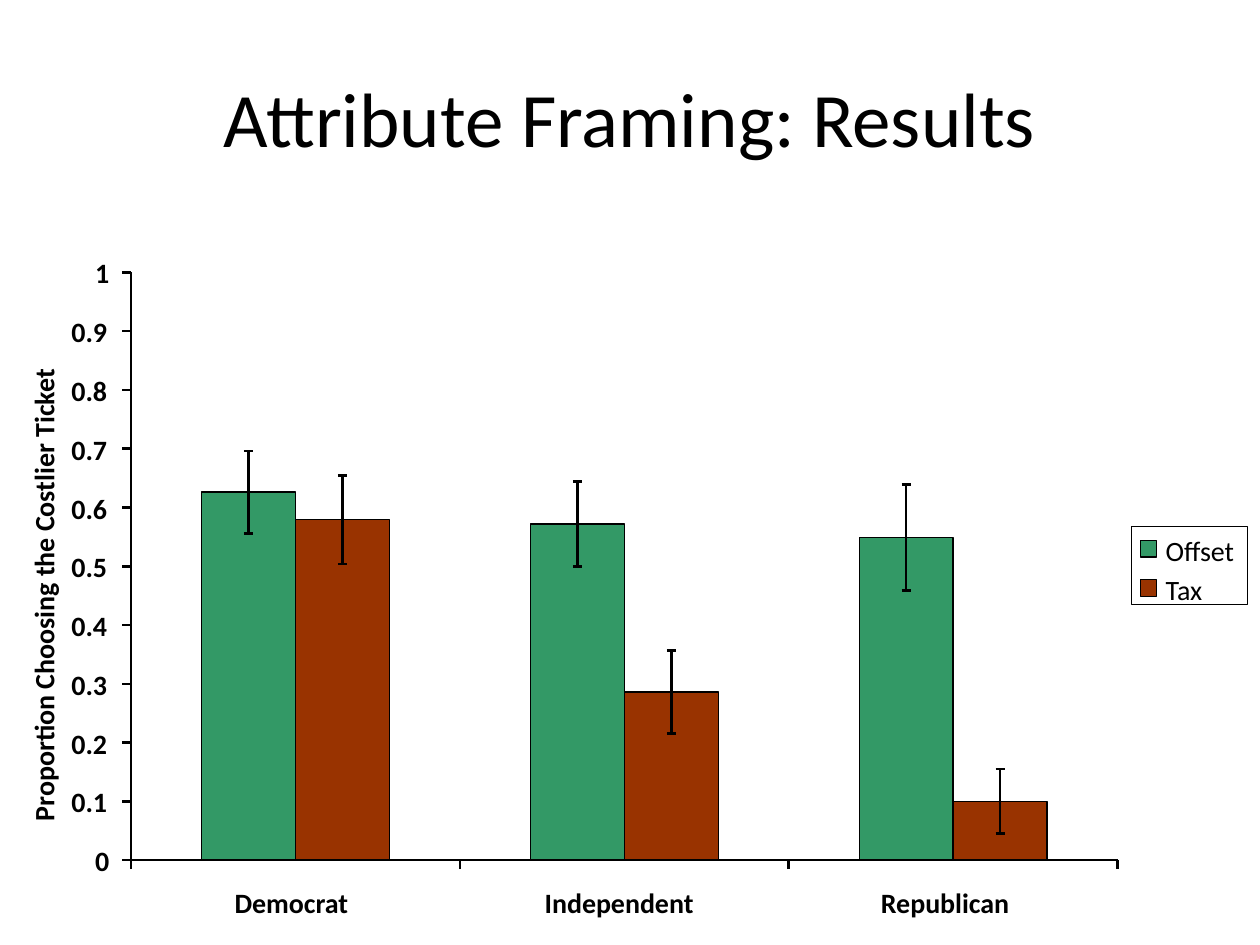
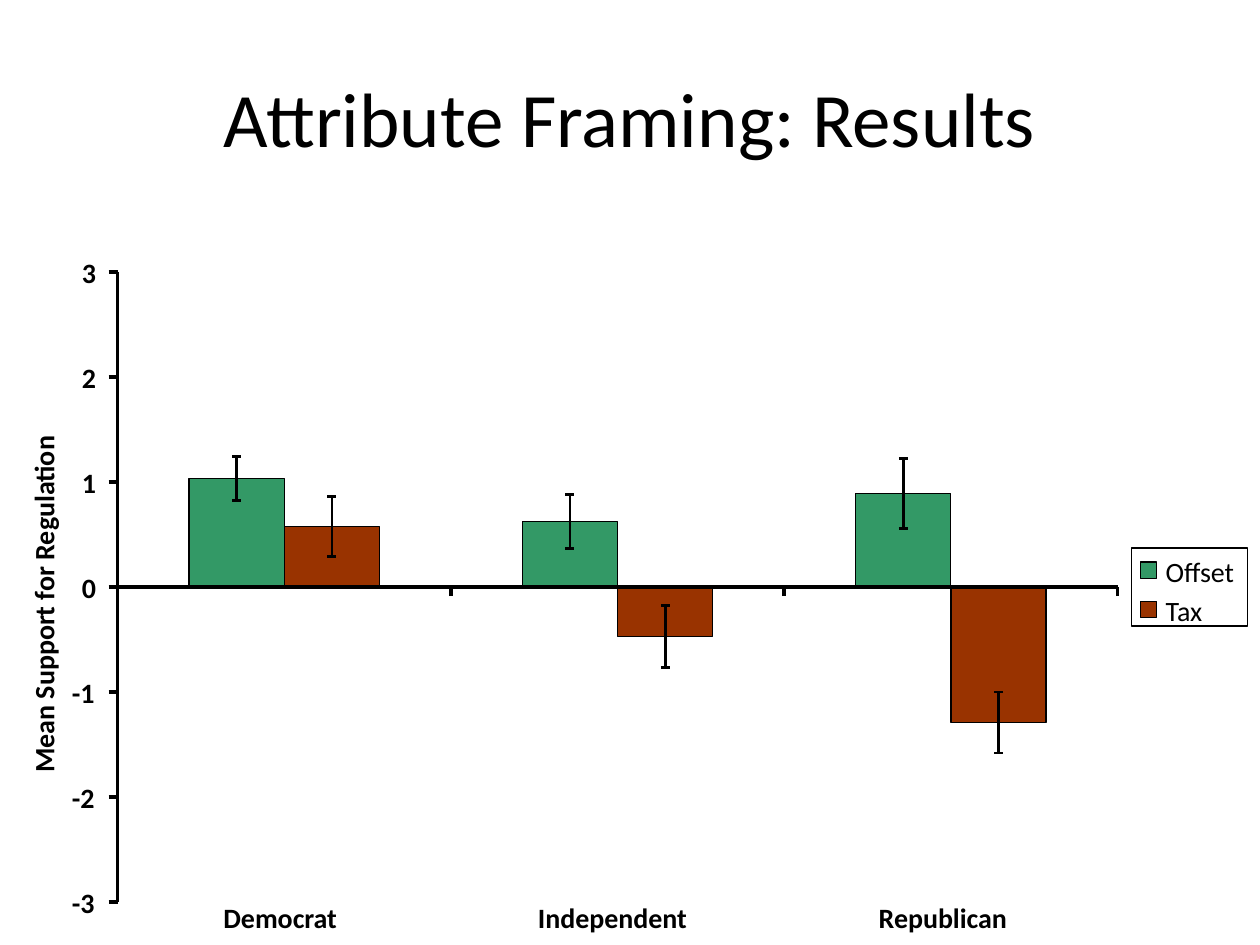
from pptx import Presentation
from pptx.dml.color import RGBColor
from pptx.enum.shapes import MSO_CONNECTOR, MSO_SHAPE
from pptx.enum.text import MSO_ANCHOR, MSO_AUTO_SIZE, PP_ALIGN
from pptx.oxml.ns import qn
from pptx.util import Cm, Pt
from lxml.etree import SubElement

COLOURS = {"ink": "000000", "paper": "FFFFFF", "Offset": "339966", "Tax": "993300"}
FONT = "Calibri"
TITLE = "Attribute Framing: Results"

# Parties and legend entries with their label widths (cm)
PARTIES = {"Democrat": 2.59, "Independent": 3.35, "Republican": 3.05}
CONDITIONS = {"Offset": 1.52, "Tax": 0.94}
TICK_WIDTHS = {1: 0.31, 2: 0.51, 3: 0.79}  # by number of characters

# Each bar is (value, error); lengths in cm, line weights in points
RESULTS = [
    {
        "measure": "Proportion Choosing the Costlier Ticket",
        "measure_width": 10.69, "measure_centre": 11.21,
        "ticks": [step / 10 for step in range(11)],
        "bars": {
            "Offset": [(0.626, 0.07), (0.572, 0.072), (0.549, 0.09)],
            "Tax": [(0.579, 0.075), (0.286, 0.071), (0.1, 0.055)],
        },
        "left": 2.64, "bottom": 17.34, "axis_weight": 1.5,
        "party_top": 17.86, "legend_top": 10.62,
    },
    {
        "measure": "Mean Support for Regulation",
        "measure_width": 7.75, "measure_centre": 11.7,
        "ticks": list(range(-3, 4)),
        "bars": {
            "Offset": [(1.035, 0.21), (0.625, 0.26), (0.892, 0.335)],
            "Tax": [(0.577, 0.285), (-0.472, 0.295), (-1.29, 0.29)],
        },
        "left": 2.37, "bottom": 18.18, "axis_weight": 2.13,
        "party_top": 18.16, "legend_top": 11.05,
    },
]

PLOT_TOP, PLOT_RIGHT = 5.49, 22.53
TICK, CAP = 0.18, 0.09
LABEL_HEIGHT = 0.69
MEASURE_X = 0.88
BARS_PER_PARTY = 3.5  # two bars plus a gap of one and a half


def colour(name):
    """Return a palette colour."""
    return RGBColor.from_string(COLOURS[name])


def add_box(slide, left, top, width, height, fill, weight=0.75):
    """Draw a filled rectangle with a black outline."""
    box = slide.shapes.add_shape(
        MSO_SHAPE.RECTANGLE, Cm(left), Cm(top), Cm(width), Cm(height))
    box.shadow.inherit = False
    box.fill.solid()
    box.fill.fore_color.rgb = colour(fill)
    box.line.color.rgb = colour("ink")
    box.line.width = Pt(weight)


def add_line(slide, x1, y1, x2, y2, weight=1.5):
    """Draw a straight black line."""
    line = slide.shapes.add_connector(
        MSO_CONNECTOR.STRAIGHT, Cm(x1), Cm(y1), Cm(x2), Cm(y2))
    line.line.color.rgb = colour("ink")
    line.line.width = Pt(weight)
    SubElement(line._element.spPr, qn("a:effectLst"))


def add_text(slide, text, left, top, width, height=LABEL_HEIGHT, size=16, bold=True):
    """Write one line in a text box without margins and return the box."""
    label = slide.shapes.add_textbox(Cm(left), Cm(top), Cm(width), Cm(height))
    frame = label.text_frame
    frame_format = {
        "margin_left": 0, "margin_right": 0, "margin_top": 0, "margin_bottom": 0,
        "word_wrap": False, "auto_size": MSO_AUTO_SIZE.SHAPE_TO_FIT_TEXT,
    }
    for attribute, value in frame_format.items():
        setattr(frame, attribute, value)
    run = frame.paragraphs[0].add_run()
    run.text = text
    for attribute, value in {"name": FONT, "size": Pt(size), "bold": bold}.items():
        setattr(run.font, attribute, value)
    run.font.color.rgb = colour("ink")
    return label


def add_title(slide):
    """Write the centred slide title."""
    frame = add_text(slide, TITLE, 1.27, 0.76, 22.86, 3.18, 44, False).text_frame
    frame.auto_size = MSO_AUTO_SIZE.NONE
    frame.word_wrap = True
    frame.vertical_anchor = MSO_ANCHOR.MIDDLE
    frame.paragraphs[0].alignment = PP_ALIGN.CENTER


def add_bars(slide, result, party_width, y_of):
    """Draw the bars of both conditions, then their error bars."""
    bar_width = party_width / BARS_PER_PARTY
    placed = []
    for position, (condition, bars) in enumerate(result["bars"].items()):
        for party, (value, error) in enumerate(bars):
            x = result["left"] + party * party_width + (0.75 + position) * bar_width
            top, base = y_of(max(value, 0)), y_of(min(value, 0))
            add_box(slide, x, top, bar_width, base - top, condition)
            placed.append((x + bar_width / 2, value, error))
    for middle, value, error in placed:
        for end in (y_of(value + error), y_of(value - error)):
            add_line(slide, middle, y_of(value), middle, end)
            add_line(slide, middle - CAP, end, middle + CAP, end)


def add_axes(slide, result, party_width, y_of):
    """Draw both axes with their tick marks and labels."""
    left, weight, zero = result["left"], result["axis_weight"], y_of(0)
    add_line(slide, left, PLOT_TOP, left, result["bottom"], weight)
    for tick in result["ticks"]:
        add_line(slide, left - TICK, y_of(tick), left, y_of(tick), weight)
    add_line(slide, left, zero, PLOT_RIGHT, zero, weight)
    for edge in range(len(PARTIES) + 1):
        x = left + edge * party_width
        add_line(slide, x, zero + TICK, x, zero, weight)

    for tick in result["ticks"]:
        number = f"{tick:g}"
        width = TICK_WIDTHS[len(number)]
        add_text(slide, number, left - 0.41 - width, y_of(tick) - 0.33, width)
    for index, (party, width) in enumerate(PARTIES.items()):
        middle = left + (index + 0.5) * party_width + 0.07
        add_text(slide, party, middle - width / 2, result["party_top"], width)
    width = result["measure_width"]
    measure = add_text(slide, result["measure"], MEASURE_X - width / 2,
                       result["measure_centre"] - LABEL_HEIGHT / 2, width)
    measure.rotation = 270


def add_legend(slide, top):
    """Draw the framed legend."""
    add_box(slide, 22.81, top, 2.34, 1.57, "paper", 0)
    for row, (condition, width) in enumerate(CONDITIONS.items()):
        row_top = top + row * 0.79
        add_box(slide, 22.99, row_top + 0.28, 0.33, 0.33, condition)
        add_text(slide, condition, 23.5, row_top + 0.13, width, bold=False)


def add_result_slide(deck, result):
    """Build one slide with its title, bar plot and legend."""
    slide = deck.slides.add_slide(deck.slide_layouts[6])
    low, high = result["ticks"][0], result["ticks"][-1]
    unit = (result["bottom"] - PLOT_TOP) / (high - low)
    party_width = (PLOT_RIGHT - result["left"]) / len(PARTIES)

    def y_of(value):
        """Return the height on the slide of a value."""
        return PLOT_TOP + (high - value) * unit

    add_title(slide)
    add_bars(slide, result, party_width, y_of)
    add_axes(slide, result, party_width, y_of)
    add_legend(slide, result["legend_top"])


deck = Presentation()
deck.slide_width, deck.slide_height = Cm(25.4), Cm(19.05)
for result in RESULTS:
    add_result_slide(deck, result)
deck.save("out.pptx")
